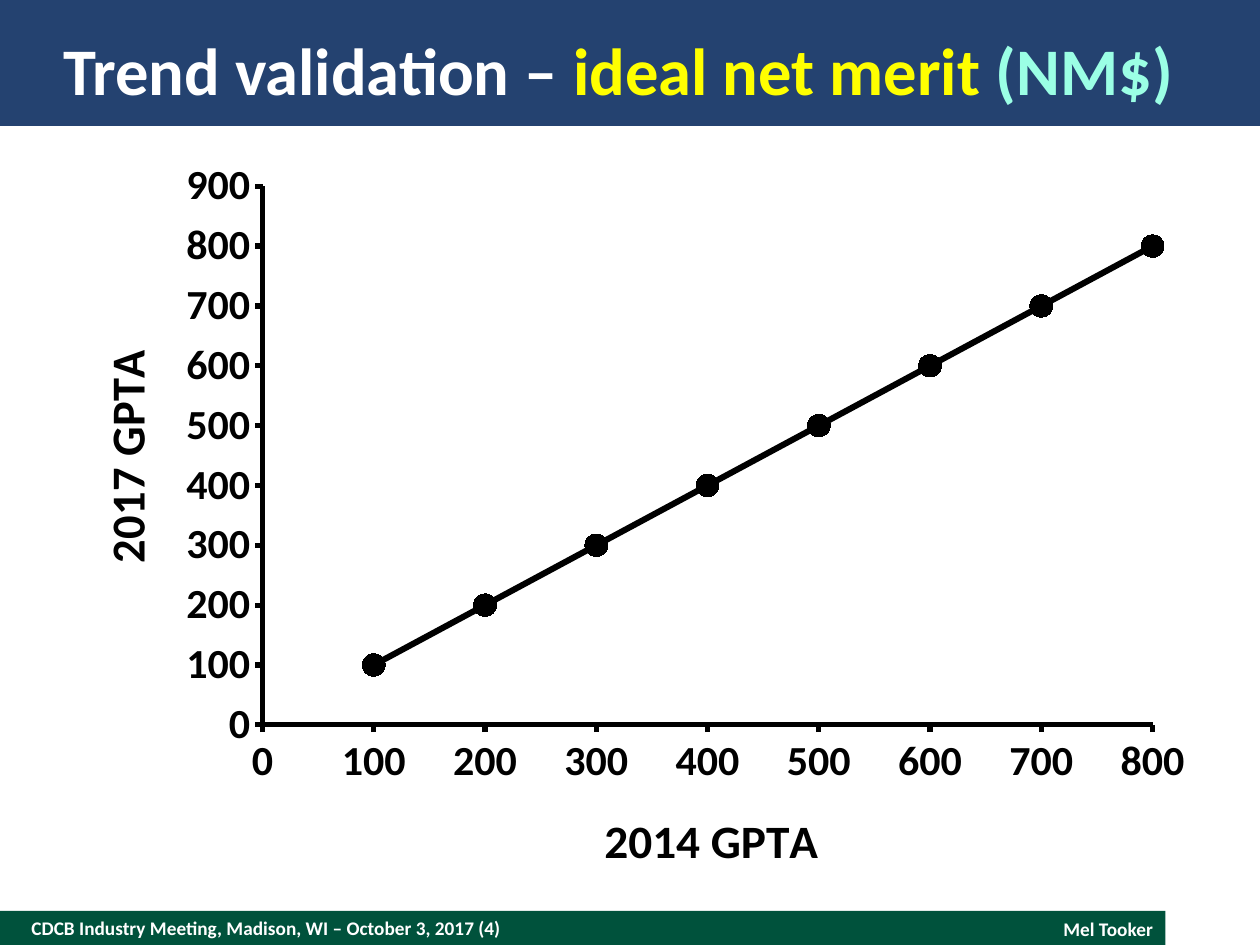
import pptx
import pptx.chart.data
import pptx.dml.color
import pptx.enum.chart
import pptx.enum.shapes
import pptx.enum.text
import pptx.oxml
import pptx.util

Inches, Pt = pptx.util.Inches, pptx.util.Pt
PP_ALIGN, MSO_ANCHOR = pptx.enum.text.PP_ALIGN, pptx.enum.text.MSO_ANCHOR
XL = pptx.enum.chart

FONT = "Calibri"
TITLE = [("Trend validation – ", "FFFFFF"), ("ideal net merit ", "FFFF00"), ("(NM$)", "9BFFE5")]
BANDS = [((0, 7.23, 9.25, 0.27), "00523C"), ((0, 0, 10, 1), "244270")]
FOOTERS = [
    ("CDCB Industry Meeting, Madison, WI – October 3, 2017 (4)", (0.25, 7.23, 6.5, 0.27), PP_ALIGN.LEFT, 0),
    ("Mel Tooker", (7.25, 7.23, 2, 0.29), PP_ALIGN.RIGHT, 0.1),
]
POINTS = [(v, v) for v in range(100, 801, 100)]
PLOT = (0.176, 0.037, 0.785, 0.756)
AXES = {"category_axis": ("2014 GPTA", 800, (0.47, 0.9)), "value_axis": ("2017 GPTA", 900, (0.02, 0.26))}
NS = ('xmlns:c="http://schemas.openxmlformats.org/drawingml/2006/chart" '
      'xmlns:a="http://schemas.openxmlformats.org/drawingml/2006/main"')
TRENDLINE = (f'<c:trendline {NS}><c:spPr><a:ln w="{Pt(3.5)}"><a:solidFill><a:srgbClr val="000000"/></a:solidFill>'
             '</a:ln></c:spPr><c:trendlineType val="linear"/><c:dispRSqr val="0"/><c:dispEq val="0"/></c:trendline>')


def rgb(value):
    """Return the colour for a hex string."""
    return pptx.dml.color.RGBColor.from_string(value)


def style(font, size, color):
    """Apply the bold slide font."""
    font.name, font.size, font.bold = FONT, Pt(size), True
    font.color.rgb = rgb(color)


def frame(tf, inset):
    """Centre a text frame vertically and set its side insets."""
    tf.word_wrap, tf.vertical_anchor = True, MSO_ANCHOR.MIDDLE
    tf.margin_left = tf.margin_right = Inches(inset)
    tf.margin_top = tf.margin_bottom = 0


def layout_xml(place, inner=False):
    """Build a manual chart layout from fractions of the chart."""
    target = '<c:layoutTarget val="inner"/>' if inner else ""
    modes = "".join(f'<c:{k}Mode val="edge"/>' for k in "xy")
    values = "".join(f'<c:{k} val="{v}"/>' for k, v in zip("xywh", place))
    return pptx.oxml.parse_xml(
        f'<c:layout {NS}><c:manualLayout>{target}{modes}{values}</c:manualLayout></c:layout>')


def set_layout(parent, layout, index):
    """Replace the layout element of a chart part."""
    for old in parent.xpath("c:layout"):
        parent.remove(old)
    parent.insert(index, layout)


def format_axis(axis, title, maximum, place):
    """Scale, title and style one axis."""
    axis.minimum_scale, axis.maximum_scale, axis.major_unit = 0, maximum, 100
    axis.has_major_gridlines = False
    axis.major_tick_mark = XL.XL_TICK_MARK.OUTSIDE
    axis.minor_tick_mark = XL.XL_TICK_MARK.NONE
    axis.tick_label_position = XL.XL_TICK_LABEL_POSITION.NEXT_TO_AXIS
    axis.format.line.width = Pt(3)
    axis.format.line.color.rgb = rgb("000000")
    style(axis.tick_labels.font, 24, "000000")
    tf = axis.axis_title.text_frame
    tf.text = title
    style(tf.paragraphs[0].runs[0].font, 27, "000000")
    set_layout(axis.axis_title._element, layout_xml(place), 1)


def add_chart(s):
    """Add the scatter chart with its linear trend."""
    data = pptx.chart.data.XyChartData()
    series = data.add_series("Series 1")
    for x, y in POINTS:
        series.add_data_point(x, y)
    chart = s.shapes.add_chart(XL.XL_CHART_TYPE.XY_SCATTER, *map(Inches, (0.5, 1.27, 9, 5.76)), data).chart
    chart.has_legend = chart.has_title = False
    chart.font.name, chart.font.size = FONT, Pt(10)
    set_layout(chart._chartSpace.chart.plotArea, layout_xml(PLOT, True), 0)
    for name, settings in AXES.items():
        format_axis(getattr(chart, name), *settings)
    plot = chart.plots[0]
    plot.vary_by_categories = False
    ser = plot.series[0]
    ser.format.line.fill.background()
    ser.marker.style, ser.marker.size = XL.XL_MARKER_STYLE.CIRCLE, 13
    ser.marker.format.fill.solid()
    ser.marker.format.fill.fore_color.rgb = rgb("000000")
    ser.marker.format.line.color.rgb = rgb("000000")
    ser._element.xpath("c:xVal")[0].addprevious(pptx.oxml.parse_xml(TRENDLINE))
    ser.smooth = False


def main():
    """Build the trend validation slide."""
    prs = pptx.Presentation()
    prs.slide_width, prs.slide_height = Inches(10), Inches(7.5)
    s = prs.slides.add_slide(prs.slide_layouts[5])
    title = s.shapes.title
    for box, color in BANDS:
        sp = s.shapes.add_shape(pptx.enum.shapes.MSO_SHAPE.RECTANGLE, *map(Inches, box))
        sp.shadow.inherit = False
        sp.fill.solid()
        sp.fill.fore_color.rgb = rgb(color)
        sp.line.fill.background()
    for text, box, align, inset in FOOTERS:
        tf = s.shapes.add_textbox(*map(Inches, box)).text_frame
        frame(tf, inset)
        p = tf.paragraphs[0]
        p.text, p.alignment = text, align
        style(p.runs[0].font, 11, "FFFFFF")
    s.shapes._spTree.append(title._element)
    title.left, title.top, title.width, title.height = map(Inches, (0.5, 0.2, 9, 0.7))
    frame(title.text_frame, 0)
    p = title.text_frame.paragraphs[0]
    p.alignment = PP_ALIGN.LEFT
    for text, color in TITLE:
        r = p.add_run()
        r.text = text
        style(r.font, 38, color)
    add_chart(s)
    prs.save("out.pptx")


if __name__ == "__main__":
    main()
